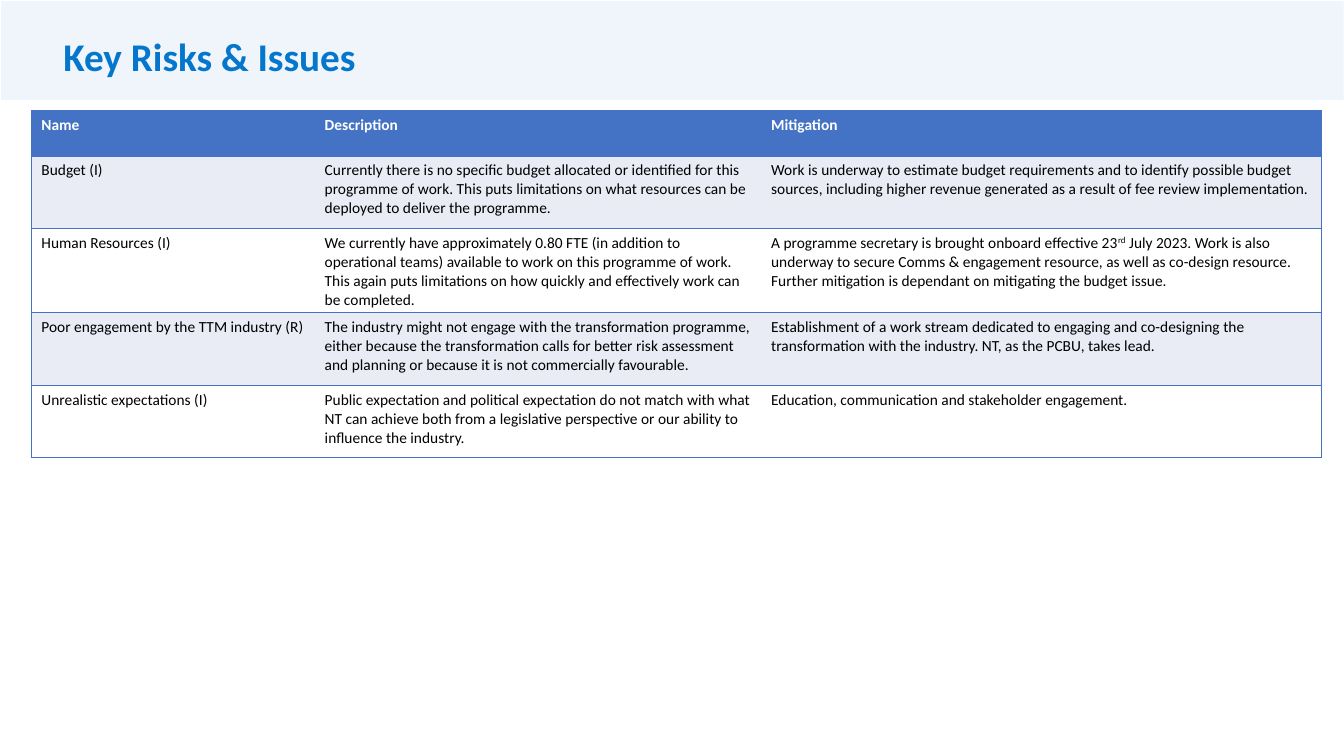
"""Build the Key Risks & Issues slide with its banner and risk table."""
from dataclasses import dataclass
from typing import Any, NamedTuple

from lxml.etree import SubElement
from pptx import Presentation
from pptx.dml.color import RGBColor as RGB
from pptx.enum.shapes import MSO_SHAPE as Shape
from pptx.oxml.ns import qn
from pptx.util import Cm, Pt


@dataclass(frozen=True)
class Theme:
    font: str = "Calibri"
    banner: str = "EFF5FB"
    title: str = "0476CC"
    accent: str = "4472C4"
    band: str = "E9EBF5"
    white: str = "FFFFFF"
    black: str = "000000"
    title_size: int = 28
    table_size: int = 11
    border: int = 1


class Risk(NamedTuple):
    name: str
    description: str
    mitigation: str


THEME = Theme()
COLUMN_WIDTHS = (7.14, 11.25, 14.12)
HEADER_HEIGHT, RISK_HEIGHT = 1.14, 1.83
HEADER = Risk("Name", "Description", "Mitigation")
RISKS = (
    Risk(
        "Budget (I)",
        "Currently there is no specific budget allocated or identified for this programme "
        "of work. This puts limitations on what resources can be deployed to deliver the "
        "programme.",
        "Work is underway to estimate budget requirements and to identify possible budget "
        "sources, including higher revenue generated as a result of fee review "
        "implementation.",
    ),
    Risk(
        "Human Resources (I)",
        "We currently have approximately 0.80 FTE (in addition to operational teams) "
        "available to work on this programme of work. This again puts limitations on how "
        "quickly and effectively work can be completed.",
        "A programme secretary is brought onboard effective 23^rd^ July 2023. Work is also "
        "underway to secure Comms & engagement resource, as well as co-design resource. "
        "Further mitigation is dependant on mitigating the budget issue.",
    ),
    Risk(
        "Poor engagement by the TTM industry (R)",
        "The industry might not engage with the transformation programme, either because "
        "the transformation calls for better risk assessment and planning or because it is "
        "not commercially favourable.",
        "Establishment of a work stream dedicated to engaging and co-designing the "
        "transformation with the industry. NT, as the PCBU, takes lead.",
    ),
    Risk(
        "Unrealistic expectations (I)",
        "Public expectation and political expectation do not match with what NT can achieve "
        "both from a legislative perspective or our ability to influence the industry.",
        "Education, communication and stakeholder engagement.",
    ),
)


def write(tf: Any, text: str, size: int, color: str, bold: bool) -> None:
    """Write text into a frame, raising the parts between carets."""
    p = tf.paragraphs[0]
    for i, part in enumerate(text.split("^")):
        r = p.add_run()
        r.text = part
        for key, value in {"name": THEME.font, "size": Pt(size), "bold": bold}.items():
            setattr(r.font, key, value)
        r.font.color.rgb = RGB.from_string(color)
        if i % 2:
            r.font._element.set("baseline", "30000")


def set_borders(cell: Any, column: int) -> None:
    """Rule a cell above and below, and at the outer sides of the table."""
    tc_pr = cell._tc.get_or_add_tcPr()
    sides = {"L": column == 0, "R": column == len(COLUMN_WIDTHS) - 1, "T": True, "B": True}
    for side, visible in sides.items():
        ln = SubElement(tc_pr, qn(f"a:ln{side}"), w=str(Pt(THEME.border)))
        if visible:
            fill = SubElement(ln, qn("a:solidFill"))
            SubElement(fill, qn("a:srgbClr"), val=THEME.accent)
        else:
            SubElement(ln, qn("a:noFill"))


def add_banner(s: Any) -> None:
    """Draw the pale banner and the slide title."""
    sp = s.shapes.add_shape(Shape.RECTANGLE, Cm(0.03), Cm(0.03), Cm(33.83), Cm(2.49))
    sp.shadow.inherit = False
    sp.fill.solid()
    sp.fill.fore_color.rgb = RGB.from_string(THEME.banner)
    sp.line.fill.background()
    tf = s.shapes.add_textbox(Cm(1.35), Cm(0.69), Cm(14.88), Cm(1.45)).text_frame
    tf.word_wrap = True
    write(tf, "Key Risks & Issues", THEME.title_size, THEME.title, True)


def add_risk_table(s: Any) -> None:
    """Draw the header row and one banded row for each risk."""
    rows = (HEADER, *RISKS)
    heights = (HEADER_HEIGHT, *[RISK_HEIGHT] * len(RISKS))
    table = s.shapes.add_table(
        len(rows), len(COLUMN_WIDTHS), Cm(0.79), Cm(2.79),
        Cm(sum(COLUMN_WIDTHS)), Cm(sum(heights)),
    ).table
    for column, width in zip(table.columns, COLUMN_WIDTHS):
        column.width = Cm(width)
    for i, (risk, height) in enumerate(zip(rows, heights)):
        table.rows[i].height = Cm(height)
        header = i == 0
        fill = THEME.accent if header else THEME.band if i % 2 else THEME.white
        color = THEME.white if header else THEME.black
        for j, text in enumerate(risk):
            cell = table.cell(i, j)
            set_borders(cell, j)
            cell.fill.solid()
            cell.fill.fore_color.rgb = RGB.from_string(fill)
            write(cell.text_frame, text, THEME.table_size, color, header)


def main() -> None:
    """Create and save the presentation."""
    prs = Presentation()
    prs.slide_width, prs.slide_height = Cm(33.87), Cm(19.05)
    s = prs.slides.add_slide(prs.slide_layouts[6])
    add_banner(s)
    add_risk_table(s)
    prs.save("out.pptx")


if __name__ == "__main__":
    main()
